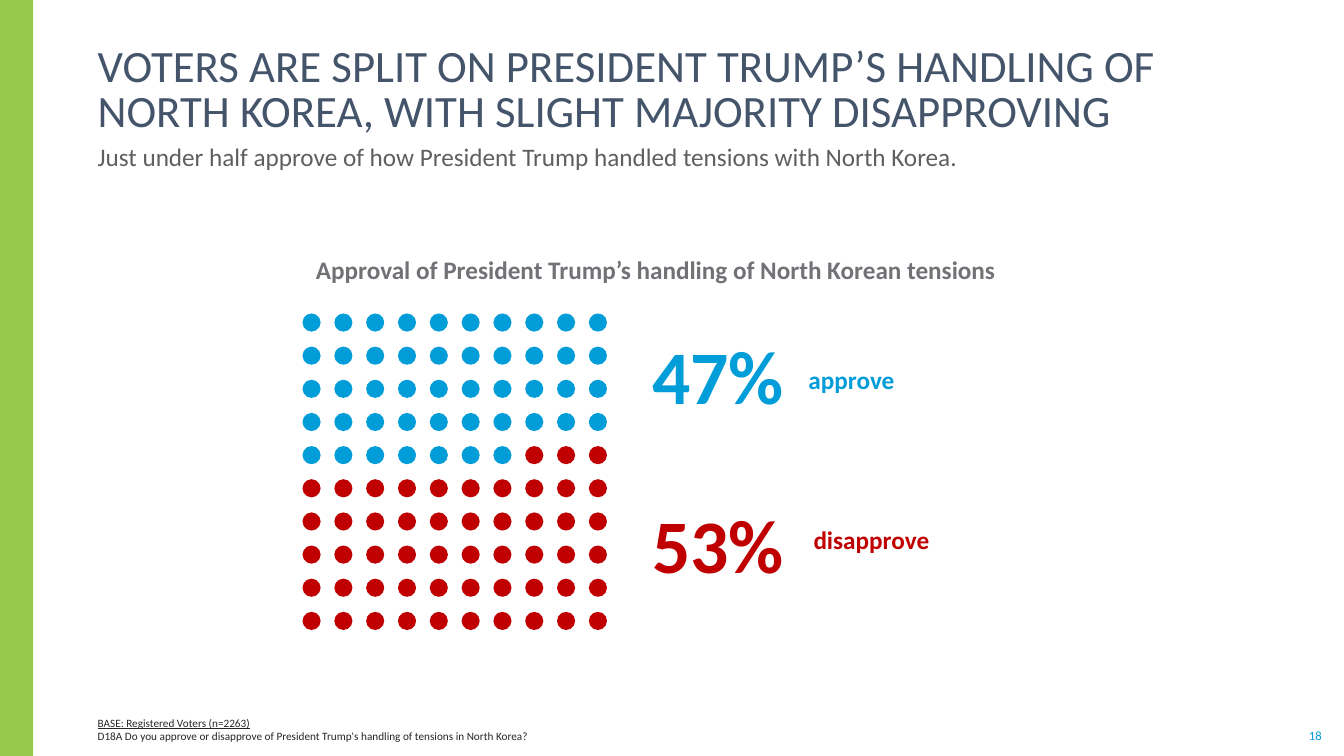
import pptx
import pptx.dml.color
import pptx.enum.shapes
import pptx.enum.text
import pptx.util

Inches = pptx.util.Inches
Pt = pptx.util.Pt
SHAPE = pptx.enum.shapes.MSO_SHAPE
ALIGN = pptx.enum.text.PP_ALIGN
ANCHOR = pptx.enum.text.MSO_ANCHOR

FONT = "Calibri"
GREEN = "96C94D"
BLUE = "009DD9"
RED = "C00000"
APPROVE = 47
SIDE_INSET = (0.1, 0)
FULL_INSET = (0.1, 0.05)


def color(hex_text):
    return pptx.dml.color.RGBColor.from_string(hex_text)


def add_filled(shapes, kind, left, top, width, height, fill):
    shape = shapes.add_shape(
        kind, Inches(left), Inches(top), Inches(width), Inches(height))
    shape.shadow.inherit = False
    shape.fill.solid()
    shape.fill.fore_color.rgb = color(fill)
    shape.line.fill.background()


def add_text(page, left, top, width, height, text, size, ink, bold=False,
             align=ALIGN.LEFT, anchor=ANCHOR.TOP, inset=FULL_INSET,
             spacing=None, wrap=True):
    """Add a text box in one style; return its text frame."""
    box = page.shapes.add_textbox(
        Inches(left), Inches(top), Inches(width), Inches(height))
    frame = box.text_frame
    frame.word_wrap = wrap
    frame.vertical_anchor = anchor
    frame.margin_left = frame.margin_right = Inches(inset[0])
    frame.margin_top = frame.margin_bottom = Inches(inset[1])
    frame.text = text
    for para in frame.paragraphs:
        para.alignment = align
        para.line_spacing = spacing
        for span in para.runs:
            span.font.name = FONT
            span.font.size = Pt(size)
            span.font.bold = bold
            span.font.color.rgb = color(ink)
    return frame


def add_heading(page, left, top, width):
    add_text(page, left, top, width, 0.62,
             "VOTERS ARE SPLIT ON PRESIDENT TRUMP’S HANDLING OF "
             "NORTH KOREA, WITH SLIGHT MAJORITY DISAPPROVING",
             32, "44546A", anchor=ANCHOR.BOTTOM, inset=SIDE_INSET,
             spacing=0.85)
    add_text(page, left, top + 0.66, width + 0.85, 0.34,
             "Just under half approve of how President Trump handled "
             "tensions with North Korea.",
             18, "5F5F5F", inset=SIDE_INSET)


def add_dot_grid(page, left, top, width, height, dot=0.18, count=10):
    """Fill a square grid of dots, one per percent, row by row."""
    column_step = (width - dot) / (count - 1)
    row_step = (height - dot) / (count - 1)
    for row in range(count):
        group = page.shapes.add_group_shape()
        for column in range(count):
            fill = BLUE if row * count + column < APPROVE else RED
            add_filled(group.shapes, SHAPE.OVAL, left + column * column_step,
                       top + row * row_step, dot, dot, fill)


def add_approval(page, left, top, width):
    add_text(page, left, top, width, 0.4,
             "Approval of President Trump’s handling of North Korean tensions",
             18, "707276", bold=True, align=ALIGN.CENTER)
    add_dot_grid(page, left + 0.17, top + 0.64, 3.02, 3.14)
    figures = left + 3.54
    add_text(page, figures, top + 0.74, 1.92, 1.01, f"{APPROVE}%", 54, BLUE,
             bold=True)
    add_text(page, figures + 1.55, top + 1.03, 2.59, 0.44, "approve", 18,
             BLUE, bold=True, spacing=Pt(26))
    add_text(page, figures, top + 2.42, 1.92, 1.31, f"{100 - APPROVE}%", 54,
             RED, bold=True)
    add_text(page, figures + 1.6, top + 2.68, 3.95, 0.4, "disapprove", 18,
             RED, bold=True)


def add_footer(page, left, top, width):
    frame = add_text(page, left, top, width, 0.4,
                     "BASE: Registered Voters (n=2263)\n"
                     "D18A Do you approve or disapprove of President Trump's "
                     "handling of tensions in North Korea?",
                     8, "262626", anchor=ANCHOR.BOTTOM, inset=SIDE_INSET)
    frame.paragraphs[0].runs[0].font.underline = True
    add_text(page, left + 12.1, top + 0.25, 0.15, 0.15, "18", 9, BLUE,
             align=ALIGN.CENTER, anchor=ANCHOR.MIDDLE, inset=(0, 0),
             wrap=False)


def main():
    deck = pptx.Presentation()
    deck.slide_width = Inches(13.33)
    deck.slide_height = Inches(7.5)
    page = deck.slides.add_slide(deck.slide_layouts[6])
    add_filled(page.shapes, SHAPE.RECTANGLE, 0, 0, 0.33, 7.5, GREEN)
    add_heading(page, 0.87, 0.74, 11.05)
    add_approval(page, 2.83, 2.47, 7.35)
    add_footer(page, 0.87, 6.97, 11.91)
    deck.save("out.pptx")


if __name__ == "__main__":
    main()
